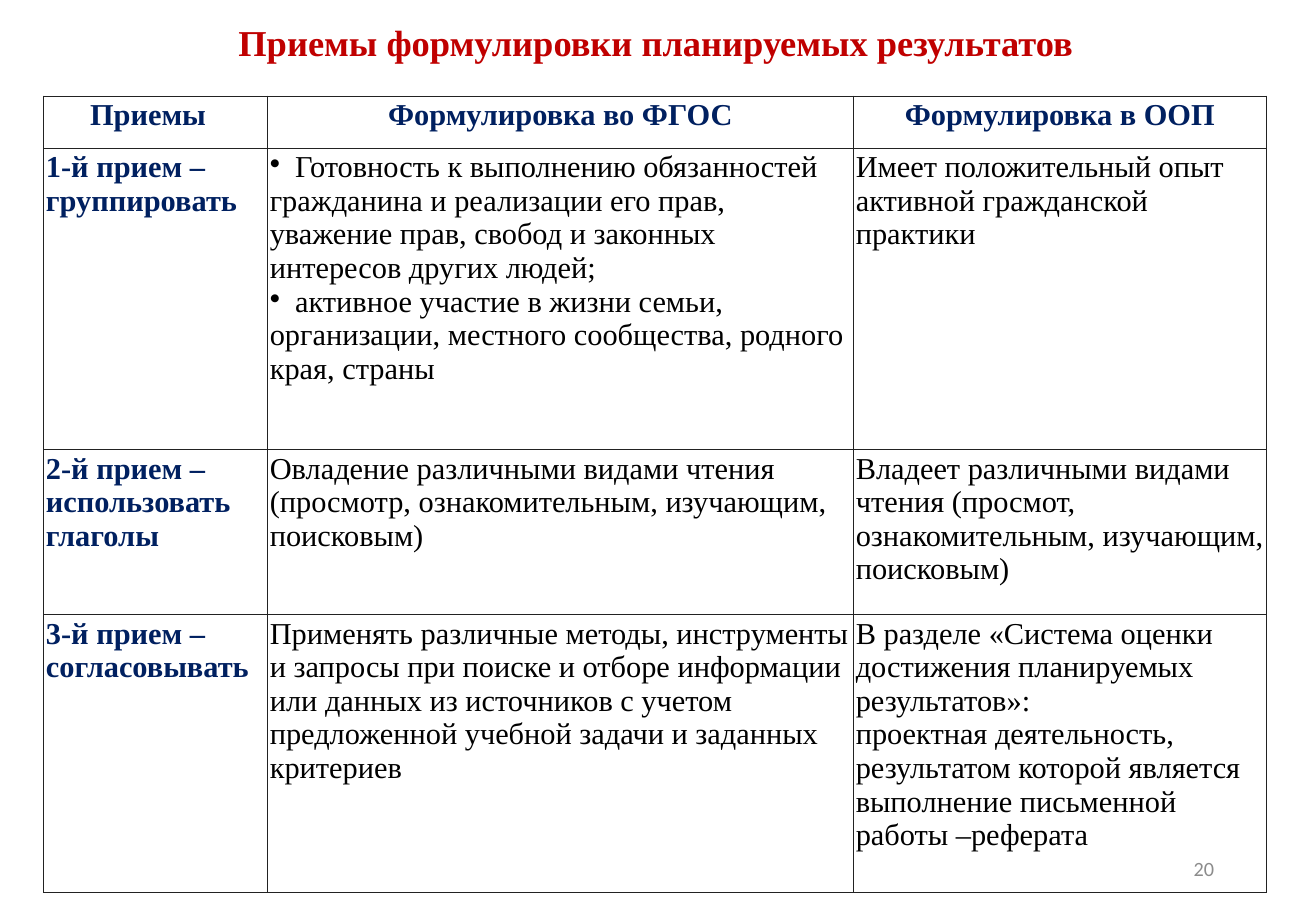
from dataclasses import dataclass

from lxml import etree
from pptx import Presentation
from pptx.dml.color import RGBColor
from pptx.enum.text import MSO_ANCHOR, MSO_AUTO_SIZE, PP_ALIGN
from pptx.oxml.ns import qn
from pptx.util import Cm, Pt

LEFT, CENTER, RIGHT = PP_ALIGN.LEFT, PP_ALIGN.CENTER, PP_ALIGN.RIGHT
MIDDLE = MSO_ANCHOR.MIDDLE
NO_AUTOFIT = MSO_AUTO_SIZE.NONE
TITLE_ONLY = 5


@dataclass(frozen=True)
class Style:
    size: float
    color: str
    bold: bool = False
    font: str = "Times New Roman"


@dataclass(frozen=True)
class Theme:
    title: Style = Style(21.6, "C00000", True)
    label: Style = Style(18, "002060", True)
    body: Style = Style(18, "000000")
    number: Style = Style(12, "8C8C8C", font="Calibri")
    border: str = "222222"
    border_width: float = 0.6


@dataclass(frozen=True)
class Technique:
    name: str
    standard: str
    programme: str
    bulleted: bool = False


THEME = Theme()
COL_WIDTHS = (4.68, 12.25, 8.63)
ROW_HEIGHTS = (1.09, 6.3, 3.45, 5.82)
CELL_MARGIN = Cm(0.05)
BULLET_TAB = Cm(0.53)

TECHNIQUES = (
    Technique("Приемы", "Формулировка во ФГОС", "Формулировка в ООП"),
    Technique(
        "1-й прием – группировать",
        "\tГотовность к выполнению обязанностей гражданина и реализации его прав, "
        "уважение прав, свобод и законных интересов других людей;\n"
        "\tактивное участие в жизни семьи, организации, местного сообщества, "
        "родного края, страны",
        "Имеет положительный опыт активной гражданской практики",
        bulleted=True,
    ),
    Technique(
        "2-й прием – использовать глаголы",
        "Овладение различными видами чтения (просмотр, ознакомительным, "
        "изучающим, поисковым)",
        "Владеет различными видами чтения (просмот, ознакомительным, "
        "изучающим, поисковым)",
    ),
    Technique(
        "3-й прием – согласовывать",
        "Применять различные методы, инструменты и запросы при поиске и отборе "
        "информации или данных из источников с учетом предложенной учебной "
        "задачи и заданных критериев",
        "В разделе «Система оценки достижения планируемых результатов»:\n"
        "проектная деятельность, результатом которой является выполнение "
        "письменной работы –реферата",
    ),
)


def set_text(tf, text: str, style: Style, align: PP_ALIGN) -> None:
    tf.text = text
    for p in tf.paragraphs:
        p.alignment = align
        for r in p.runs:
            r.font.name = style.font
            r.font.size = Pt(style.size)
            r.font.bold = style.bold
            r.font.color.rgb = RGBColor.from_string(style.color)


def add_bullet(p) -> None:
    pPr = p._p.get_or_add_pPr()
    pPr.set("marL", "0")
    pPr.set("indent", "0")
    etree.SubElement(pPr, qn("a:buChar"), char="•")
    tabs = etree.SubElement(pPr, qn("a:tabLst"))
    etree.SubElement(tabs, qn("a:tab"), pos=str(int(BULLET_TAB)), algn="l")


def add_borders(cell) -> None:
    tcPr = cell._tc.get_or_add_tcPr()
    for side in ("lnL", "lnR", "lnT", "lnB"):
        ln = etree.SubElement(tcPr, qn(f"a:{side}"), w=str(int(Pt(THEME.border_width))))
        fill = etree.SubElement(ln, qn("a:solidFill"))
        etree.SubElement(fill, qn("a:srgbClr"), val=THEME.border)


def fill_cell(cell, text: str, style: Style, align: PP_ALIGN) -> None:
    cell.margin_left = cell.margin_right = CELL_MARGIN
    cell.margin_top = cell.margin_bottom = CELL_MARGIN
    add_borders(cell)
    cell.fill.background()
    set_text(cell.text_frame, text, style, align)


def add_title(s) -> None:
    title = s.shapes.title
    title.left, title.top, title.width, title.height = Cm(1.85), Cm(0), Cm(23.72), Cm(1.88)
    tf = title.text_frame
    tf.auto_size = NO_AUTOFIT
    tf.vertical_anchor = MIDDLE
    set_text(tf, "Приемы формулировки планируемых результатов", THEME.title, CENTER)
    tf.paragraphs[0].line_spacing = 0.9


def add_techniques(s) -> None:
    table = s.shapes.add_table(
        len(ROW_HEIGHTS), len(COL_WIDTHS), Cm(0.91), Cm(2.01),
        Cm(sum(COL_WIDTHS)), Cm(sum(ROW_HEIGHTS)),
    ).table
    for column, width in zip(table.columns, COL_WIDTHS):
        column.width = Cm(width)
    for row, height in zip(table.rows, ROW_HEIGHTS):
        row.height = Cm(height)
    for i, item in enumerate(TECHNIQUES):
        for j, text in enumerate((item.name, item.standard, item.programme)):
            style = THEME.label if i == 0 or j == 0 else THEME.body
            fill_cell(table.cell(i, j), text, style, CENTER if i == 0 else LEFT)
        if item.bulleted:
            for p in table.cell(i, 1).text_frame.paragraphs:
                add_bullet(p)
    table.cell(0, 0).margin_right = Cm(0.36)


def add_page_number(s) -> None:
    tf = s.shapes.add_textbox(Cm(19.43), Cm(17.65), Cm(6.2), Cm(1.02)).text_frame
    tf.word_wrap = True
    tf.vertical_anchor = MIDDLE
    set_text(tf, "20", THEME.number, RIGHT)


def main() -> None:
    prs = Presentation()
    prs.slide_width, prs.slide_height = Cm(27.51), Cm(19.05)
    s = prs.slides.add_slide(prs.slide_layouts[TITLE_ONLY])
    add_title(s)
    add_techniques(s)
    add_page_number(s)
    prs.save("out.pptx")


if __name__ == "__main__":
    main()
